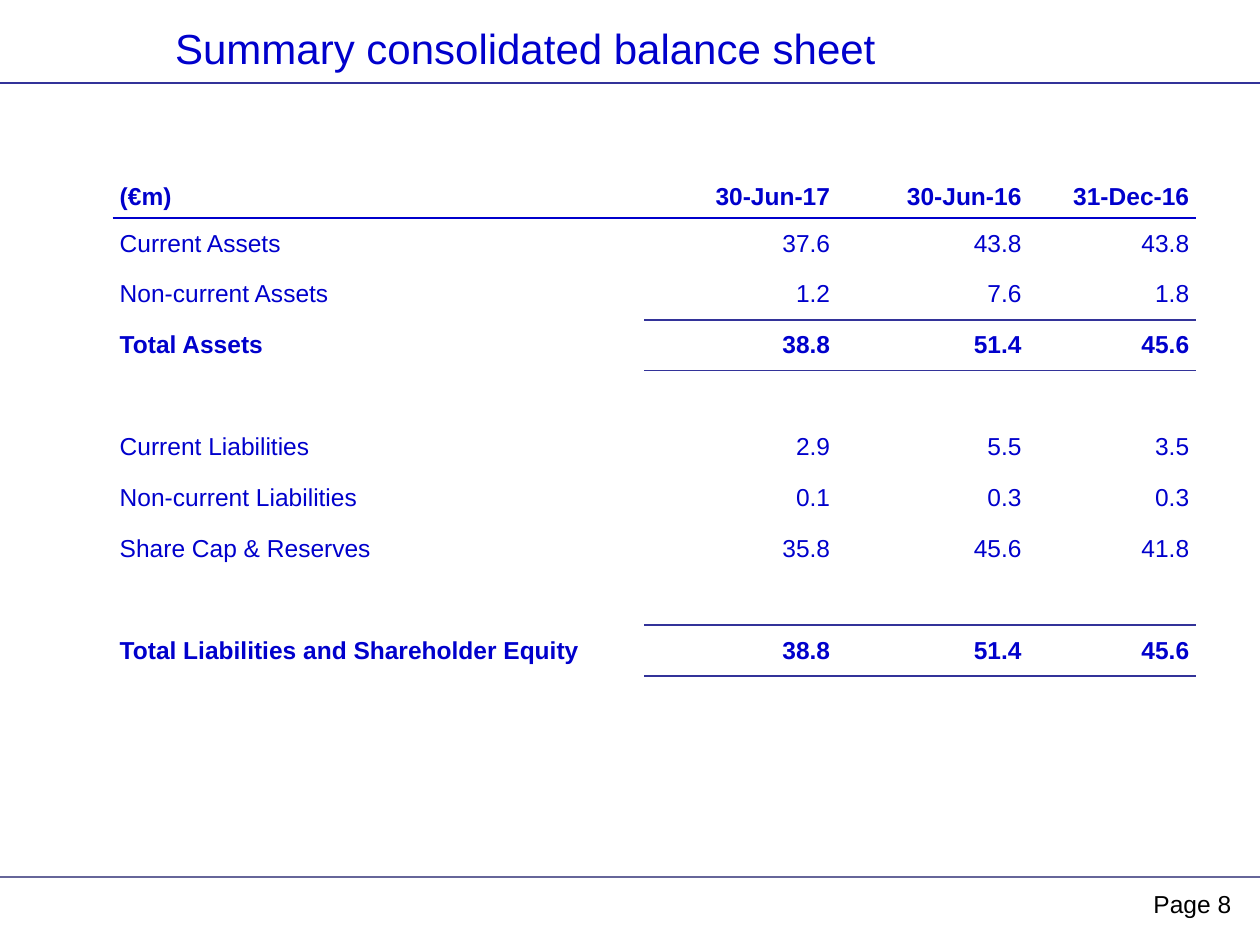
from dataclasses import dataclass

from lxml.etree import SubElement
from pptx import Presentation
from pptx.dml.color import RGBColor
from pptx.enum.shapes import MSO_CONNECTOR
from pptx.enum.text import MSO_ANCHOR, PP_ALIGN
from pptx.oxml import parse_xml
from pptx.oxml.ns import nsdecls, qn
from pptx.util import Pt


@dataclass(frozen=True)
class Theme:
    font: str = "Arial"
    text: str = "0000CC"
    rule: str = "333399"
    footer_rule: str = "666699"
    page: str = "000000"
    title_size: float = 24
    body_size: float = 14


@dataclass(frozen=True)
class Row:
    label: str = ""
    values: tuple = ("", "", "")
    bold: bool = False
    rule_below: str = ""
    full_rule: bool = False


@dataclass(frozen=True)
class Rule:
    y: float
    color: str


THEME = Theme()
SLIDE_W, SLIDE_H = 720, 540
TABLE_X, TABLE_Y = 64.8, 100.1
COL_WIDTHS = (303.8, 109.4, 109.4, 95.8)
HEAD_H, ROW_H, MARGIN = 24.5, 29.1, 3.6

RULES = (Rule(501.1, THEME.footer_rule), Rule(47.5, THEME.rule))
ROWS = (
    Row("(€m)", ("30-Jun-17", "30-Jun-16", "31-Dec-16"), True, THEME.text, True),
    Row("Current Assets", ("37.6", "43.8", "43.8")),
    Row("Non-current Assets", ("1.2", "7.6", "1.8"), rule_below=THEME.rule),
    Row("Total Assets", ("38.8", "51.4", "45.6"), True, THEME.rule),
    Row(),
    Row("Current Liabilities", ("2.9", "5.5", "3.5")),
    Row("Non-current Liabilities", ("0.1", "0.3", "0.3")),
    Row("Share Cap & Reserves", ("35.8", "45.6", "41.8")),
    Row(rule_below=THEME.rule),
    Row("Total Liabilities and Shareholder Equity", ("38.8", "51.4", "45.6"), True, THEME.rule),
)


def place(s, x: float, y: float, w: float, h: float) -> None:
    for name, value in {"left": x, "top": y, "width": w, "height": h}.items():
        setattr(s, name, Pt(value))


def write(tf, text: str, align, size: float, color: str, bold: bool = False) -> None:
    p = tf.paragraphs[0]
    p.alignment = align
    r = p.add_run()
    r.text = text
    for name, value in {"name": THEME.font, "size": Pt(size), "bold": bold}.items():
        setattr(r.font, name, value)
    r.font.color.rgb = RGBColor.from_string(color)


def draw_rule(slide, rule: Rule) -> None:
    s = slide.shapes.add_connector(
        MSO_CONNECTOR.STRAIGHT, Pt(0), Pt(rule.y), Pt(SLIDE_W), Pt(rule.y))
    s.line.width = Pt(0.75)
    s.line.color.rgb = RGBColor.from_string(rule.color)
    SubElement(s._element.spPr, qn("a:effectLst"))


def draw_border(cell, side: str, color: str) -> None:
    # Border lines must come before the fill in the cell properties
    cell._tc.get_or_add_tcPr().insert(0, parse_xml(
        f'<a:{side} {nsdecls("a")} w="{Pt(1)}"><a:solidFill>'
        f'<a:srgbClr val="{color}"/></a:solidFill></a:{side}>'))


def fill_cell(cell, text: str, align, bold: bool) -> None:
    cell.fill.background()
    v_margin = MARGIN if text else 0
    formats = {
        "vertical_anchor": MSO_ANCHOR.MIDDLE,
        "margin_left": Pt(MARGIN), "margin_right": Pt(MARGIN),
        "margin_top": Pt(v_margin), "margin_bottom": Pt(v_margin),
    }
    for name, value in formats.items():
        setattr(cell, name, value)
    if text:
        write(cell.text_frame, text, align, THEME.body_size, THEME.text, bold)


def draw_table(slide, rows: tuple) -> None:
    heights = [HEAD_H] + [ROW_H] * (len(rows) - 1)
    table = slide.shapes.add_table(
        len(rows), len(COL_WIDTHS), Pt(TABLE_X), Pt(TABLE_Y),
        Pt(sum(COL_WIDTHS)), Pt(sum(heights))).table
    table.first_row = table.horz_banding = False
    for col, width in zip(table.columns, COL_WIDTHS):
        col.width = Pt(width)
    for i, row in enumerate(rows):
        table.rows[i].height = Pt(heights[i])
        for j, text in enumerate((row.label, *row.values)):
            cell = table.cell(i, j)
            fill_cell(cell, text, PP_ALIGN.RIGHT if j else PP_ALIGN.LEFT, row.bold)
            # A rule belongs to the cells on both sides of it
            above = rows[i - 1] if i else Row()
            for side, source in (("lnB", row), ("lnT", above)):
                if source.rule_below and (j or source.full_rule):
                    draw_border(cell, side, source.rule_below)


def main() -> None:
    prs = Presentation()
    prs.slide_width, prs.slide_height = Pt(SLIDE_W), Pt(SLIDE_H)
    slide = prs.slides.add_slide(prs.slide_layouts[5])

    # Header and footer rules
    for rule in RULES:
        draw_rule(slide, rule)

    # Title
    title = slide.shapes.title
    place(title, 37.4, 0, 525.6, 54.7)
    title.text_frame.vertical_anchor = MSO_ANCHOR.MIDDLE
    write(title.text_frame, "Summary consolidated balance sheet",
          PP_ALIGN.CENTER, THEME.title_size, THEME.text)

    # Balance sheet
    draw_table(slide, ROWS)

    # Page number
    page = slide.shapes.add_textbox(Pt(542.9), Pt(504.7), Pt(167.8), Pt(35))
    page.text_frame.word_wrap = True
    write(page.text_frame, "Page 8", PP_ALIGN.RIGHT, THEME.body_size, THEME.page)

    prs.save("out.pptx")


if __name__ == "__main__":
    main()
